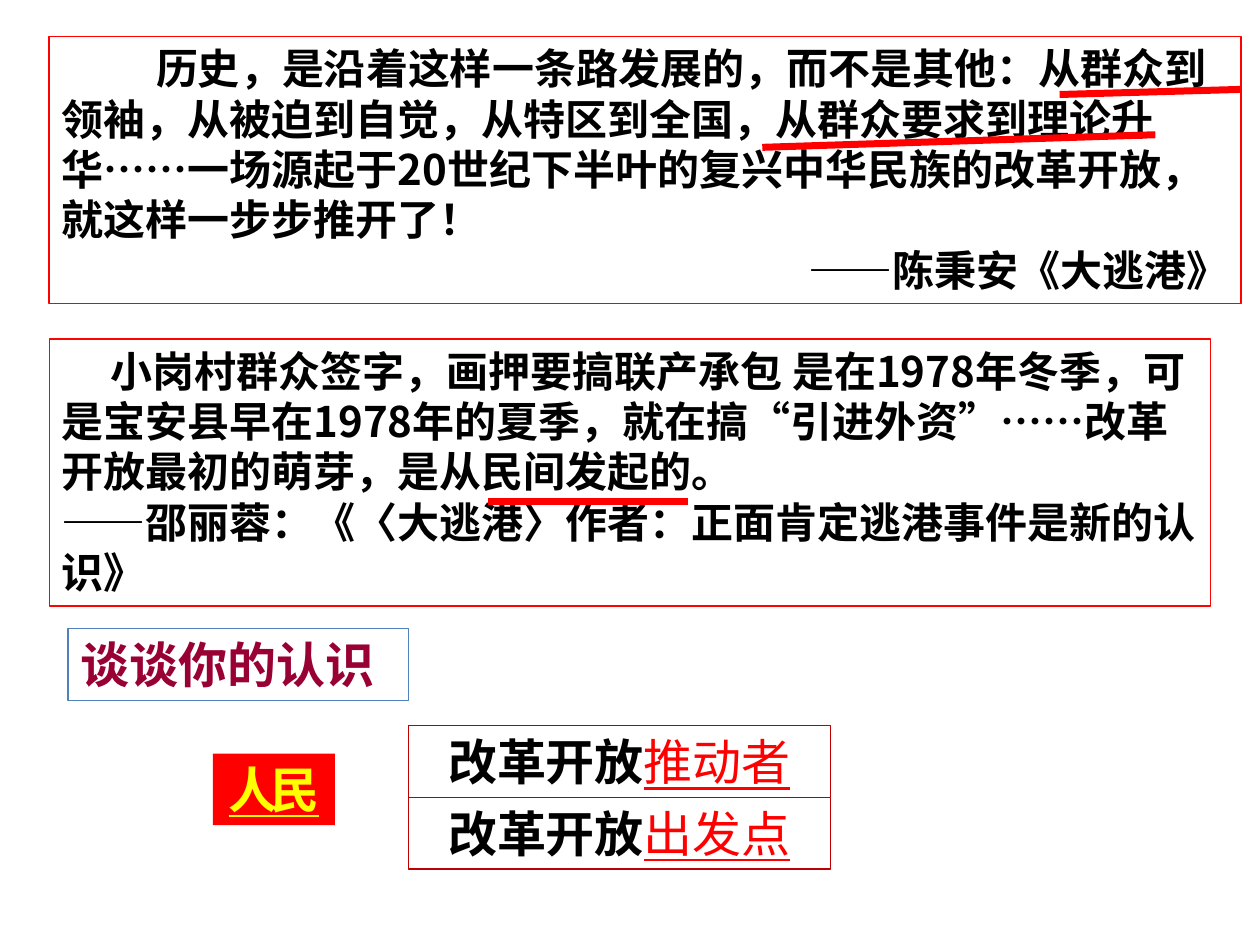
"""Build a slide with two quotations on reform and a summary of the people's role."""
from dataclasses import dataclass
from typing import Optional

from lxml.etree import SubElement
from pptx import Presentation
from pptx.dml.color import RGBColor
from pptx.enum.lang import MSO_LANGUAGE_ID as LANG
from pptx.enum.shapes import MSO_CONNECTOR as CONN, MSO_SHAPE as SHAPE
from pptx.enum.text import MSO_ANCHOR as ANCHOR, PP_ALIGN as ALIGN
from pptx.oxml.ns import qn
from pptx.util import Pt

FONT = "Noto Sans CJK SC"
BLACK = RGBColor(0x00, 0x00, 0x00)
WHITE = RGBColor(0xFF, 0xFF, 0xFF)
RED = RGBColor(0xFF, 0x00, 0x00)
SCARLET = RGBColor(0xFF, 0x03, 0x00)
DARK_RED = RGBColor(0xC0, 0x00, 0x00)
YELLOW = RGBColor(0xFF, 0xFF, 0x00)
BLUE = RGBColor(0x4F, 0x81, 0xBD)
PLUM = RGBColor(0x99, 0x00, 0x33)


@dataclass
class Run:
    text: str
    size: float = 24
    color: RGBColor = BLACK
    bold: bool = True
    underline: bool = False
    spacing: float = 0


@dataclass
class Para:
    runs: list[Run]
    align: ALIGN = ALIGN.LEFT
    indent: float = 0


@dataclass
class Box:
    left: float
    top: float
    width: float
    height: float
    paras: list[Para]
    fill: Optional[RGBColor] = None
    line: Optional[RGBColor] = None


@dataclass
class Stroke:
    x1: float
    y1: float
    x2: float
    y2: float


def add_run(p, run: Run) -> None:
    r = p.add_run()
    r.text = run.text
    font = r.font
    font.name, font.size = FONT, Pt(run.size)
    font.bold, font.underline = run.bold, run.underline
    font.color.rgb = run.color
    font.language_id = LANG.SIMPLIFIED_CHINESE
    rPr = r._r.get_or_add_rPr()
    SubElement(rPr, qn("a:ea")).set("typeface", FONT)
    if run.spacing:
        rPr.set("spc", str(int(run.spacing * 100)))


def add_box(slide, box: Box) -> None:
    sp = slide.shapes.add_shape(
        SHAPE.RECTANGLE, Pt(box.left), Pt(box.top), Pt(box.width), Pt(box.height))
    sp.shadow.inherit = False
    if box.fill is None:
        sp.fill.background()
    else:
        sp.fill.solid()
        sp.fill.fore_color.rgb = box.fill
    if box.line is None:
        sp.line.fill.background()
    else:
        sp.line.color.rgb = box.line
        sp.line.width = Pt(0.75)
    tf = sp.text_frame
    tf.word_wrap = True
    tf.vertical_anchor = ANCHOR.TOP
    for i, para in enumerate(box.paras):
        p = tf.add_paragraph() if i else tf.paragraphs[0]
        p.alignment = para.align
        p.line_spacing = Pt(round(para.runs[0].size * 1.2, 1))
        if para.indent:
            p._p.get_or_add_pPr().set("indent", str(Pt(para.indent)))
        for run in para.runs:
            add_run(p, run)


def add_stroke(slide, stroke: Stroke) -> None:
    line = slide.shapes.add_connector(
        CONN.STRAIGHT, Pt(stroke.x1), Pt(stroke.y1), Pt(stroke.x2), Pt(stroke.y2))
    line.line.color.rgb = RED
    line.line.width = Pt(4)
    SubElement(line._element.spPr, qn("a:effectLst"))


def role_box(row: int, role: str) -> Box:
    runs = [Run("改革开放", 28), Run(role, 28, RED, bold=False, underline=True)]
    return Box(233.3, 414.7 + row * 41, 241.2, 41,
               [Para(runs, ALIGN.CENTER)], WHITE, DARK_RED)


BOXES = [
    Box(28.1, 20.9, 681.1, 152.6, [
        Para([Run("历史，是沿着这样一条路发展的，而不是其他：从群众到领袖，从被迫到自觉，"
                  "从特区到全国，从群众要求到理论升华……一场源起于20世纪下半叶的"
                  "复兴中华民族的改革开放，就这样一步步推开了！")], indent=54),
        Para([Run("——陈秉安《大逃港》")], ALIGN.RIGHT),
    ], WHITE, RED),
    Box(28.1, 193.7, 663.8, 152.6, [
        Para([Run("小岗村群众签字，画押要搞联产承包 是在1978年冬季，可是宝安县早在"
                  "1978年的夏季，就在搞“引进外资”……改革开放最初的萌芽，"
                  "是从民间发起的。")], indent=28),
        Para([Run("——邵丽蓉：《〈大逃港〉作者：正面肯定逃港事件是新的认识》")]),
    ], line=SCARLET),
    Box(121.7, 430.6, 69.8, 41, [
        Para([Run("人民", 28, YELLOW, underline=True, spacing=-4)], ALIGN.CENTER),
    ], RED),
    Box(38.9, 359.3, 194.4, 41, [Para([Run("谈谈你的认识", 28, PLUM)])], line=BLUE),
    role_box(0, "推动者"),
    role_box(1, "出发点"),
]

STROKES = [
    Stroke(605.5, 54, 709.2, 51.1),
    Stroke(435.6, 84.2, 660.2, 77),
    Stroke(278.6, 286.6, 393.1, 286.6),
]


def main() -> None:
    prs = Presentation()
    prs.slide_width, prs.slide_height = Pt(720), Pt(540)
    slide = prs.slides.add_slide(prs.slide_layouts[6])
    for box in BOXES:
        add_box(slide, box)
    for stroke in STROKES:
        add_stroke(slide, stroke)
    prs.save("out.pptx")


if __name__ == "__main__":
    main()
